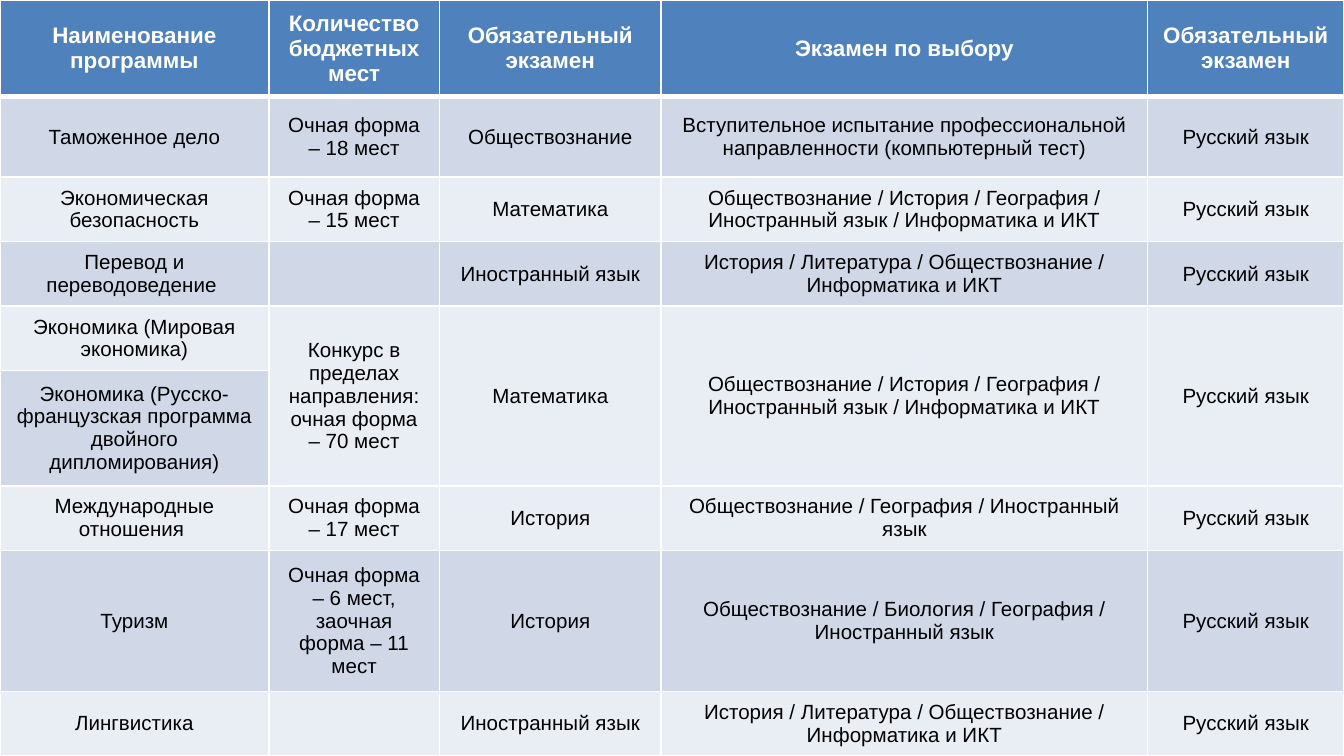
from lxml.etree import SubElement
from pptx import Presentation
from pptx.dml.color import RGBColor
from pptx.enum.text import MSO_ANCHOR, PP_ALIGN
from pptx.oxml.ns import qn
from pptx.util import Inches, Pt

COLORS = {
    "header": "4F81BD",
    "odd": "D0D8E8",
    "even": "E9EDF4",
    "white": "FFFFFF",
    "black": "000000",
}
SLIDE_WIDTH = Inches(10)
SLIDE_HEIGHT = SLIDE_WIDTH * 9 // 16
COLUMN_WEIGHTS = [2, 1.27, 1.65, 3.62, 1.46]
ROW_WEIGHTS = [0.72, 0.6, 0.48, 0.48, 0.48, 0.86, 0.48, 1.05, 0.48]

RUSSIAN = "Русский язык"
FOREIGN = "Иностранный язык"
ECONOMICS_CHOICE = "Обществознание / История / География / Иностранный язык / Информатика и ИКТ"
LINGUISTICS_CHOICE = "История / Литература / Обществознание / Информатика и ИКТ"
HEADINGS = [
    "Наименование программы",
    "Количество бюджетных мест",
    "Обязательный экзамен",
    "Экзамен по выбору",
    "Обязательный экзамен",
]
PROGRAMS = [
    ["Таможенное дело", "Очная форма – 18 мест", "Обществознание",
     "Вступительное испытание профессиональной направленности (компьютерный тест)", RUSSIAN],
    ["Экономическая безопасность", "Очная форма – 15 мест", "Математика", ECONOMICS_CHOICE, RUSSIAN],
    ["Перевод и переводоведение ", "", FOREIGN, LINGUISTICS_CHOICE, RUSSIAN],
    ["Экономика (Мировая экономика)", "Конкурс в пределах направления: очная форма – 70 мест",
     "Математика", ECONOMICS_CHOICE, RUSSIAN],
    ["Экономика (Русско-французская программа двойного дипломирования)", "", "", "", ""],
    ["Международные отношения ", "Очная форма – 17 мест", "История",
     "Обществознание / География / Иностранный язык", RUSSIAN],
    ["Туризм", "Очная форма – 6 мест, заочная форма – 11 мест", "История",
     "Обществознание / Биология / География / Иностранный язык", RUSSIAN],
    ["Лингвистика", "", FOREIGN, LINGUISTICS_CHOICE, RUSSIAN],
]
ECONOMICS_ROWS = (4, 5)


def write_text(cell, text, size=11, color="black", bold=False):
    cell.vertical_anchor = MSO_ANCHOR.MIDDLE
    paragraph = cell.text_frame.paragraphs[0]
    paragraph.alignment = PP_ALIGN.CENTER
    if text:
        run = paragraph.add_run()
        run.text = text
        run.font.name = "Arial"
        run.font.size = Pt(size)
        run.font.bold = bold
        run.font.color.rgb = RGBColor.from_string(COLORS[color])


def style_cell(cell, fill, top=1, bottom=1):
    """Set white borders, widths in points, and then the fill."""
    properties = cell._tc.get_or_add_tcPr()
    for side, width in (("L", 1), ("R", 1), ("T", top), ("B", bottom)):
        line = SubElement(properties, qn(f"a:ln{side}"), w=str(Pt(width)))
        solid = SubElement(line, qn("a:solidFill"))
        SubElement(solid, qn("a:srgbClr"), val=COLORS["white"])
    cell.fill.solid()
    cell.fill.fore_color.rgb = RGBColor.from_string(COLORS[fill])


def set_shares(weights, total):
    return [round(total * weight / sum(weights)) for weight in weights]


def add_programs_table(slide, left, top, width, height):
    rows = [HEADINGS] + PROGRAMS
    table = slide.shapes.add_table(len(rows), len(HEADINGS), left, top, width, height).table
    for column, share in zip(table.columns, set_shares(COLUMN_WEIGHTS, width)):
        column.width = share
    for row, share in zip(table.rows, set_shares(ROW_WEIGHTS, height)):
        row.height = share

    for row_index, texts in enumerate(rows):
        for column_index, text in enumerate(texts):
            cell = table.cell(row_index, column_index)
            if row_index == 0:
                style_cell(cell, "header", bottom=3)
                write_text(cell, text, size=12, color="white", bold=True)
            else:
                style_cell(cell, "odd" if row_index % 2 else "even", top=3 if row_index == 1 else 1)
                write_text(cell, text)

    first, last = ECONOMICS_ROWS
    for column_index in range(1, len(HEADINGS)):
        table.cell(first, column_index).merge(table.cell(last, column_index))


def main():
    presentation = Presentation()
    presentation.slide_width, presentation.slide_height = SLIDE_WIDTH, SLIDE_HEIGHT
    slide = presentation.slides.add_slide(presentation.slide_layouts[6])
    add_programs_table(slide, 0, 0, SLIDE_WIDTH, SLIDE_HEIGHT)
    presentation.save("out.pptx")


if __name__ == "__main__":
    main()
